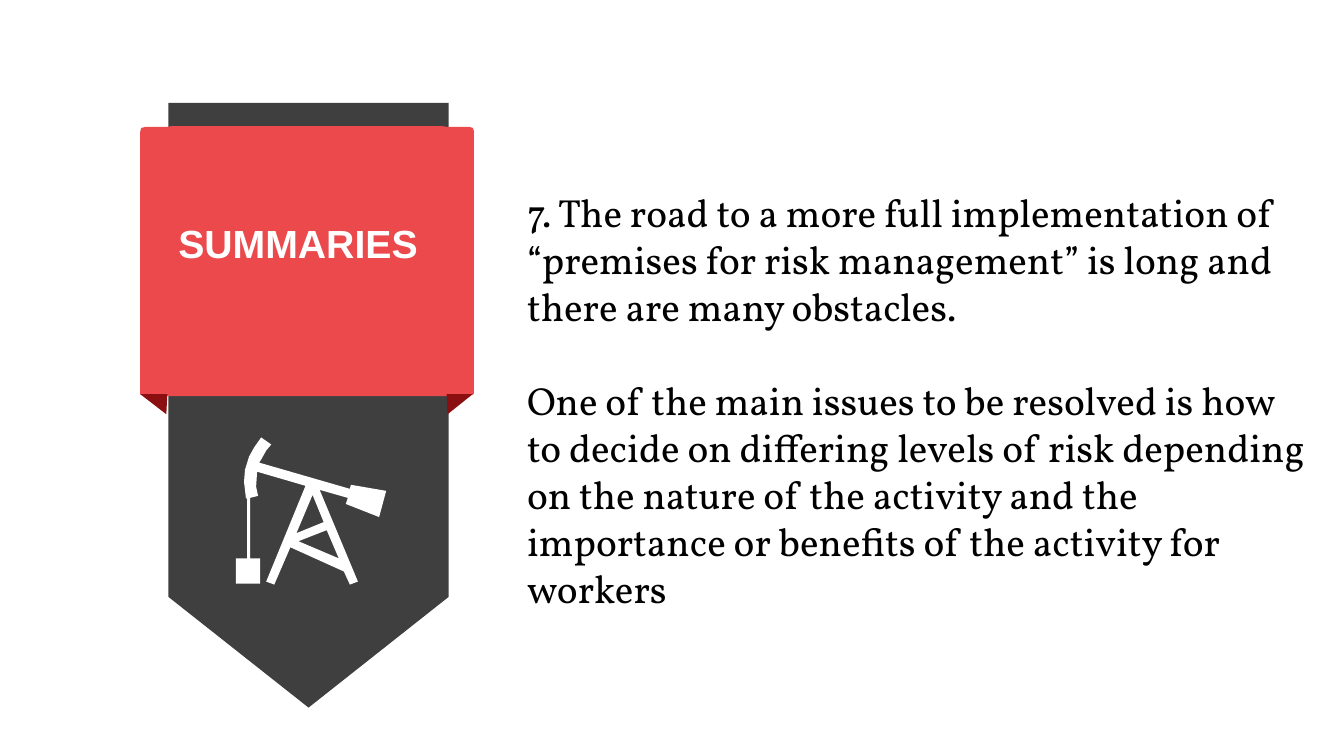
from dataclasses import dataclass

from pptx import Presentation
from pptx.dml.color import RGBColor
from pptx.enum.shapes import MSO_SHAPE
from pptx.enum.text import MSO_AUTO_SIZE, PP_ALIGN
from pptx.shapes.autoshape import Shape
from pptx.slide import Slide
from pptx.util import Pt

PX = 9144  # EMU in one px, at 100 px to the inch
PENTAGON = MSO_SHAPE.PENTAGON
LEFT, CENTER = PP_ALIGN.LEFT, PP_ALIGN.CENTER
FIT_SHAPE = MSO_AUTO_SIZE.SHAPE_TO_FIT_TEXT

CHARCOAL = RGBColor(0x3F, 0x3F, 0x3F)
RED = RGBColor(0xEB, 0x49, 0x4B)
DARK_RED = RGBColor(0x8B, 0x0F, 0x11)
WHITE = RGBColor(0xFF, 0xFF, 0xFF)
BLACK = RGBColor(0x00, 0x00, 0x00)

TEXT_SIZE = Pt(28)
PARAGRAPH_GAP = Pt(33.5)

Contour = list[tuple[int, int]]


@dataclass(frozen=True)
class Outline:
    color: RGBColor
    contours: list[Contour]


@dataclass(frozen=True)
class TextBlock:
    left: int
    top: int
    width: int
    height: int
    paragraphs: list[str]
    font: str
    color: RGBColor
    background: RGBColor
    bold: bool = False
    align: PP_ALIGN = LEFT


BANNER = Outline(RED, [[
    (139, 131), (140, 127), (144, 126), (165, 126), (171, 125),
    (438, 125), (444, 126), (466, 126), (469, 127), (470, 130),
    (470, 391), (463, 393), (145, 393), (139, 391),
]])
LEFT_FOLD = Outline(DARK_RED, [[(166, 391), (165, 411), (139, 391)]])
RIGHT_FOLD = Outline(DARK_RED, [[(443, 391), (444, 411), (469, 391)]])

PUMP_BODY: Contour = [
    # Horse head and walking beam with its counterweight
    (259, 434), (269, 441), (264, 447), (259, 456), (257, 459),
    (347, 485), (348, 481), (383, 487), (376, 513), (343, 500), (345, 494),
    # Right leg, cross brace and left leg
    (317, 486), (355, 577), (347, 580), (341, 567), (288, 543),
    (272, 580), (264, 577), (303, 482),
    # Inner side of the head, rod and weight
    (255, 468), (254, 483), (256, 492), (248, 494), (248, 554),
    (258, 554), (258, 579), (234, 579), (234, 554), (245, 554), (245, 494),
    # Outer side of the head
    (244, 495), (242, 478), (243, 466), (247, 453), (252, 444),
]
LOWER_GAP: Contour = [(296, 537), (336, 554), (324, 526)]
UPPER_GAP: Contour = [(310, 491), (294, 529), (321, 518)]
PUMP = Outline(WHITE, [PUMP_BODY, LOWER_GAP, UPPER_GAP])

HEADING = TextBlock(156, 213, 279, 57, ["SUMMARIES"],
                    "Arial", WHITE, RED, bold=True, align=CENTER)
SUMMARY = TextBlock(513, 182, 794, 387, [
    "7. The road to a more full implementation of “premises for risk "
    "management” is long and there are many obstacles.",
    "One of the main issues to be resolved is how to decide on differing "
    "levels of risk depending on the nature of the activity and the "
    "importance or benefits of the activity for workers",
], "Vollkorn", BLACK, WHITE)


def paint(shape: Shape, color: RGBColor) -> None:
    shape.shadow.inherit = False
    shape.fill.solid()
    shape.fill.fore_color.rgb = color
    shape.line.fill.background()


def add_ribbon(page: Slide) -> None:
    """Draw the pentagon turned so that its tip points down."""
    ribbon = page.shapes.add_shape(PENTAGON, 6 * PX, 263 * PX, 600 * PX, 278 * PX)
    ribbon.rotation = 90
    ribbon.adjustments[0] = 0.395
    paint(ribbon, CHARCOAL)


def add_outline(page: Slide, outline: Outline) -> None:
    """Draw one shape; contours after the first are holes in it."""
    first, *holes = outline.contours
    builder = page.shapes.build_freeform(*first[0], scale=PX)
    builder.add_line_segments(first[1:])
    for hole in holes:
        builder.move_to(*hole[0])
        builder.add_line_segments(hole[1:])
    paint(builder.convert_to_shape(), outline.color)


def add_text(page: Slide, block: TextBlock) -> None:
    box = page.shapes.add_textbox(block.left * PX, block.top * PX,
                                  block.width * PX, block.height * PX)
    box.fill.solid()
    box.fill.fore_color.rgb = block.background
    frame = box.text_frame
    frame.word_wrap = True
    frame.auto_size = FIT_SHAPE
    frame.text = "\n".join(block.paragraphs)
    for index, para in enumerate(frame.paragraphs):
        para.alignment = block.align
        if index:
            para.space_before = PARAGRAPH_GAP
        for span in para.runs:
            span.font.name = block.font
            span.font.size = TEXT_SIZE
            span.font.bold = block.bold
            span.font.color.rgb = block.color


def main() -> None:
    deck = Presentation()
    deck.slide_width, deck.slide_height = 1333 * PX, 750 * PX
    page = deck.slides.add_slide(deck.slide_layouts[6])
    add_ribbon(page)
    for outline in (BANNER, LEFT_FOLD, RIGHT_FOLD, PUMP):
        add_outline(page, outline)
    for block in (HEADING, SUMMARY):
        add_text(page, block)
    deck.save("out.pptx")


if __name__ == "__main__":
    main()
